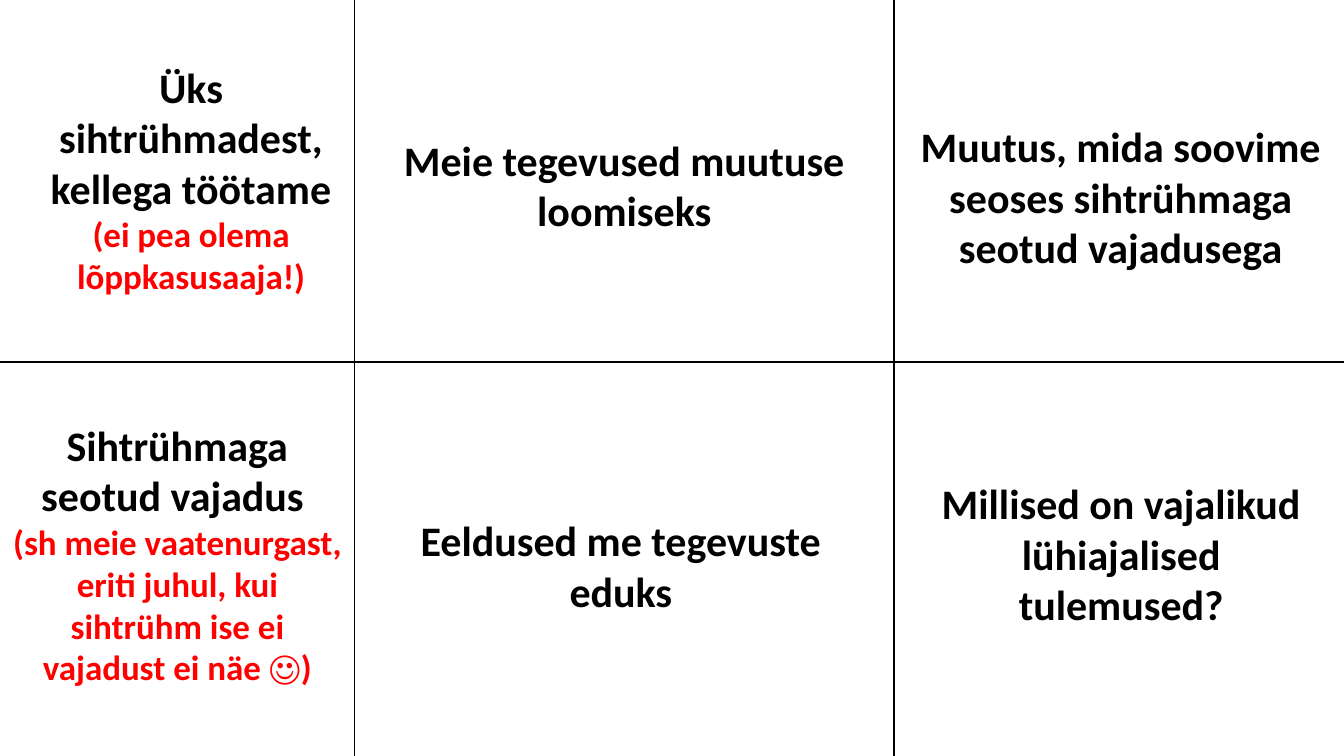
from dataclasses import dataclass

import pptx
import pptx.dml.color
import pptx.enum.shapes
import pptx.enum.text
import pptx.oxml
import pptx.oxml.ns
import pptx.slide
import pptx.util

Pt = pptx.util.Pt
BLACK = pptx.dml.color.RGBColor(0x00, 0x00, 0x00)
RED = pptx.dml.color.RGBColor(0xFF, 0x00, 0x00)
WIDTH, HEIGHT = 960, 540
INSET = 3.6
HEADING_SIZE, REMARK_SIZE = 30, 25


@dataclass(frozen=True)
class Cell:
    left: float
    top: float
    width: float
    height: float
    heading: str
    remark: str = ""
    remark_on_new_paragraph: bool = False


@dataclass(frozen=True)
class Divider:
    x1: float
    y1: float
    x2: float
    y2: float


CELLS = [
    Cell(23.8, 40.3, 225.4, 177.1, "Üks sihtrühmadest, kellega töötame ",
         "(ei pea olema lõppkasusaaja!)"),
    Cell(281.5, 92.2, 329, 79.9, "Meie tegevused muutuse loomiseks"),
    Cell(645.8, 82.8, 309.6, 116.6,
         "Muutus, mida soovime seoses sihtrühmaga seotud vajadusega"),
    Cell(2.9, 295.9, 247.7, 200.9, "Sihtrühmaga seotud vajadus ",
         "(sh meie vaatenurgast, eriti juhul, kui sihtrühm ise ei vajadust ei näe ☺)",
         remark_on_new_paragraph=True),
    Cell(285.8, 364.3, 315.4, 79.9, "Eeldused me tegevuste eduks"),
    Cell(666.7, 337.7, 268.6, 116.6, "Millised on vajalikud lühiajalised tulemused?"),
]

DIVIDERS = [
    Divider(253.4, 0, 253.4, HEIGHT),
    Divider(638.6, 0, 638.6, HEIGHT),
    Divider(0, 258.5, WIDTH, 258.5),
]


def add_run(paragraph, text: str, size: float, color: pptx.dml.color.RGBColor) -> None:
    run = paragraph.add_run()
    run.text = text
    for name, value in {"name": "Calibri", "size": Pt(size), "bold": True}.items():
        setattr(run.font, name, value)
    run.font.color.rgb = color


def add_centred_paragraph(paragraph):
    paragraph.alignment = pptx.enum.text.PP_ALIGN.CENTER
    return paragraph


def add_cell(slide: pptx.slide.Slide, cell: Cell) -> None:
    shape = slide.shapes.add_textbox(
        Pt(cell.left), Pt(cell.top), Pt(cell.width), Pt(cell.height))
    frame = shape.text_frame
    frame_format = {
        "word_wrap": True,
        "auto_size": pptx.enum.text.MSO_AUTO_SIZE.SHAPE_TO_FIT_TEXT,
        "margin_left": Pt(INSET),
        "margin_top": Pt(INSET),
        "margin_right": Pt(INSET),
        "margin_bottom": Pt(INSET),
    }
    for name, value in frame_format.items():
        setattr(frame, name, value)
    paragraph = add_centred_paragraph(frame.paragraphs[0])
    add_run(paragraph, cell.heading, HEADING_SIZE, BLACK)
    if cell.remark:
        if cell.remark_on_new_paragraph:
            paragraph = add_centred_paragraph(frame.add_paragraph())
        add_run(paragraph, cell.remark, REMARK_SIZE, RED)


def add_divider(slide: pptx.slide.Slide, divider: Divider) -> None:
    connector = slide.shapes.add_connector(
        pptx.enum.shapes.MSO_CONNECTOR.STRAIGHT,
        Pt(divider.x1), Pt(divider.y1), Pt(divider.x2), Pt(divider.y2))
    connector.line.color.rgb = BLACK
    connector.line.width = Pt(1)
    properties = connector._element.spPr
    properties.append(pptx.oxml.parse_xml(
        f"<a:effectLst {pptx.oxml.ns.nsdecls('a')}/>"))


def main() -> None:
    presentation = pptx.Presentation()
    presentation.slide_width = Pt(WIDTH)
    presentation.slide_height = Pt(HEIGHT)
    blank_layout = presentation.slide_layouts.get_by_name("Blank")
    slide = presentation.slides.add_slide(blank_layout)
    for divider in DIVIDERS:
        add_divider(slide, divider)
    for cell in CELLS:
        add_cell(slide, cell)
    presentation.save("out.pptx")


if __name__ == "__main__":
    main()
